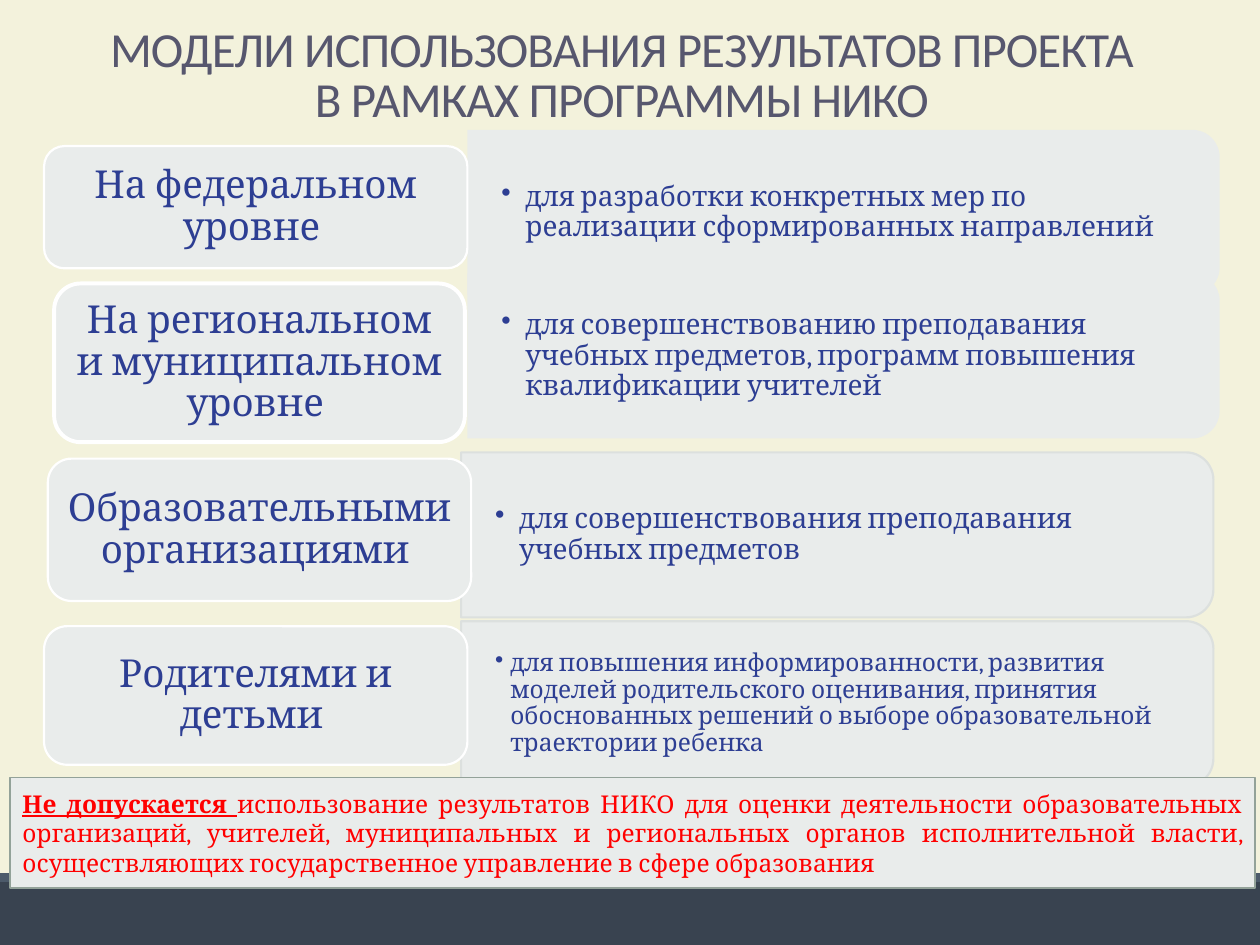
from dataclasses import dataclass

from lxml.etree import SubElement
from pptx import Presentation
from pptx.dml.color import RGBColor
from pptx.enum.shapes import MSO_SHAPE
from pptx.enum.text import MSO_ANCHOR, PP_ALIGN
from pptx.oxml.ns import qn
from pptx.util import Inches, Pt


@dataclass(frozen=True)
class Theme:
    """Colours, fonts and type sizes of the slide."""
    background: str = "F3F2DC"
    footer: str = "394350"
    footer_edge: str = "4C5A6A"
    panel: str = "E9ECEB"
    panel_line: str = "DCE0DE"
    label_line: str = "FFFFFF"
    notice_line: str = "93A299"
    title: str = "57576E"
    text: str = "2D3E93"
    warning: str = "FF0000"
    heading_font: str = "Calibri"
    body_font: str = "Cambria"
    title_size: int = 28
    label_size: int = 22
    body_size: int = 16
    small_size: int = 14


@dataclass(frozen=True)
class Level:
    """One level of use: its label, its purpose and their boxes."""
    label: str
    purpose: str
    label_box: tuple
    panel_corner: tuple
    size: int = Theme.body_size
    hanging: float = 0.19
    label_line: float = 1.25
    outlined: bool = False


THEME = Theme()
PANEL_WIDTH, PANEL_HEIGHT = 5.97, 1.31
TITLE_LINES = ("МОДЕЛИ ИСПОЛЬЗОВАНИЯ РЕЗУЛЬТАТОВ ПРОЕКТА ", "В РАМКАХ ПРОГРАММЫ НИКО ")
LEVELS = (
    Level("На федеральном уровне ",
          "для разработки конкретных мер по реализации сформированных направлений",
          (0.35, 1.16, 3.36, 0.97), (3.71, 1.03)),
    Level("На региональном и муниципальном уровне ",
          "для совершенствованию преподавания учебных предметов, программ повышения "
          "квалификации учителей",
          (0.43, 2.25, 3.26, 1.26), (3.71, 2.17), label_line=2.25),
    Level("Образовательными организациями ",
          "для совершенствования преподавания учебных предметов",
          (0.38, 3.64, 3.36, 1.13), (3.66, 3.59), outlined=True),
    Level("Родителями и детьми ",
          "для повышения информированности, развития моделей родительского оценивания, "
          "принятия обоснованных решений о выборе образовательной траектории ребенка",
          (0.35, 4.97, 3.36, 1.1), (3.66, 4.93), THEME.small_size, 0.12, outlined=True),
)
NOTICE = ("Не допускается ",
          "использование результатов НИКО для оценки деятельности образовательных организаций, "
          "учителей, муниципальных и региональных органов исполнительной власти, "
          "осуществляющих государственное управление в сфере образования")


def add_box(slide, kind, box, fill, line=None, width=1):
    """Add a flat preset shape in the given box."""
    shape = slide.shapes.add_shape(kind, *map(Inches, box))
    shape.shadow.inherit = False
    shape.fill.solid()
    shape.fill.fore_color.rgb = RGBColor.from_string(fill)
    if line:
        shape.line.color.rgb = RGBColor.from_string(line)
        shape.line.width = Pt(width)
    else:
        shape.line.fill.background()
    return shape


def set_frame(shape, horizontal=0.1, vertical=0.05, anchor=MSO_ANCHOR.MIDDLE, wrap=True):
    """Set the insets, anchor and wrapping of a text frame and return it."""
    frame = shape.text_frame
    frame.word_wrap = wrap
    frame.vertical_anchor = anchor
    frame.margin_left = frame.margin_right = Inches(horizontal)
    frame.margin_top = frame.margin_bottom = Inches(vertical)
    return frame


def add_run(paragraph, text, size, color, font=THEME.body_font):
    """Add one styled run to a paragraph."""
    run = paragraph.add_run()
    run.text = text
    run.font.size = Pt(size)
    run.font.name = font
    run.font.color.rgb = RGBColor.from_string(color)
    return run


def indent(paragraph, left, first=0):
    """Set the left and first-line indents of a paragraph."""
    properties = paragraph._p.get_or_add_pPr()
    properties.set("marL", str(Inches(left)))
    properties.set("indent", str(Inches(first)))
    return properties


def add_text_shadow(run):
    """Tighten the letters of a run and give them a soft shadow."""
    properties = run.font._element
    properties.set("spc", "-50")
    effects = properties.makeelement(qn("a:effectLst"), {})
    properties.find(qn("a:solidFill")).addnext(effects)
    shadow = SubElement(effects, qn("a:outerShdw"), blurRad="50800", dist="38100", dir="2700000")
    color = SubElement(shadow, qn("a:srgbClr"), val="000000")
    SubElement(color, qn("a:alpha"), val="40000")


def add_footer(slide, box):
    """Draw the dark footer band with its thin upper edge."""
    left, top, width, height = box
    edge = 0.07
    add_box(slide, MSO_SHAPE.RECTANGLE, (left, top + edge, width, height - edge), THEME.footer)
    add_box(slide, MSO_SHAPE.RECTANGLE, (left, top, width, edge), THEME.footer_edge)


def add_title(slide, box):
    """Write the two-line centred title."""
    frame = set_frame(slide.shapes.add_textbox(*map(Inches, box)),
                      anchor=MSO_ANCHOR.TOP, wrap=False)
    for index, line in enumerate(TITLE_LINES):
        paragraph = frame.add_paragraph() if index else frame.paragraphs[0]
        paragraph.alignment = PP_ALIGN.CENTER
        paragraph.line_spacing = 0.85
        indent(paragraph, 0.1)
        add_text_shadow(add_run(paragraph, line, THEME.title_size, THEME.title,
                                THEME.heading_font))


def add_panel(slide, box, level):
    """Draw a panel rounded on the right with its bulleted purpose."""
    left, top, width, height = box
    turned = (left + (width - height) / 2, top + (height - width) / 2, height, width)
    panel = add_box(slide, MSO_SHAPE.ROUND_2_SAME_RECTANGLE, turned, THEME.panel,
                    THEME.panel_line if level.outlined else None, 1.25)
    panel.rotation = 90
    text_box = (left, top + 0.065, width - 0.07, height - 0.13)
    frame = set_frame(slide.shapes.add_textbox(*map(Inches, text_box)), 0.27, 0.14)
    paragraph = frame.paragraphs[0]
    paragraph.line_spacing = 0.9
    properties = indent(paragraph, level.hanging, -level.hanging)
    SubElement(properties, qn("a:buChar"), char="•")
    add_run(paragraph, level.purpose, level.size, THEME.text)


def add_label(slide, box, level):
    """Draw the rounded label that names a level."""
    label = add_box(slide, MSO_SHAPE.ROUNDED_RECTANGLE, box, THEME.panel,
                    THEME.label_line, level.label_line)
    paragraph = set_frame(label, 0.09, 0.05).paragraphs[0]
    paragraph.alignment = PP_ALIGN.CENTER
    paragraph.line_spacing = 0.9
    add_run(paragraph, level.label, THEME.label_size, THEME.text)


def add_notice(slide, box):
    """Draw the warning box with its underlined opening words."""
    shape = add_box(slide, MSO_SHAPE.RECTANGLE, box, THEME.panel, THEME.notice_line)
    paragraph = set_frame(shape).paragraphs[0]
    paragraph.alignment = PP_ALIGN.JUSTIFY
    opening, rest = (add_run(paragraph, text, THEME.small_size, THEME.warning) for text in NOTICE)
    opening.font.bold = opening.font.underline = True
    rest.font.bold = rest.font.underline = False


def main():
    """Build and save the slide."""
    presentation = Presentation()
    presentation.slide_width, presentation.slide_height = Inches(10), Inches(7.5)
    slide = presentation.slides.add_slide(presentation.slide_layouts[6])
    slide.background.fill.solid()
    slide.background.fill.fore_color.rgb = RGBColor.from_string(THEME.background)
    add_footer(slide, (0, 6.93, 10, 0.57))
    add_title(slide, (0.59, 0.17, 8.67, 0.9))
    for level in LEVELS:
        add_panel(slide, (*level.panel_corner, PANEL_WIDTH, PANEL_HEIGHT), level)
        add_label(slide, level.label_box, level)
    add_notice(slide, (0.08, 6.17, 9.88, 0.88))
    presentation.save("out.pptx")


if __name__ == "__main__":
    main()
